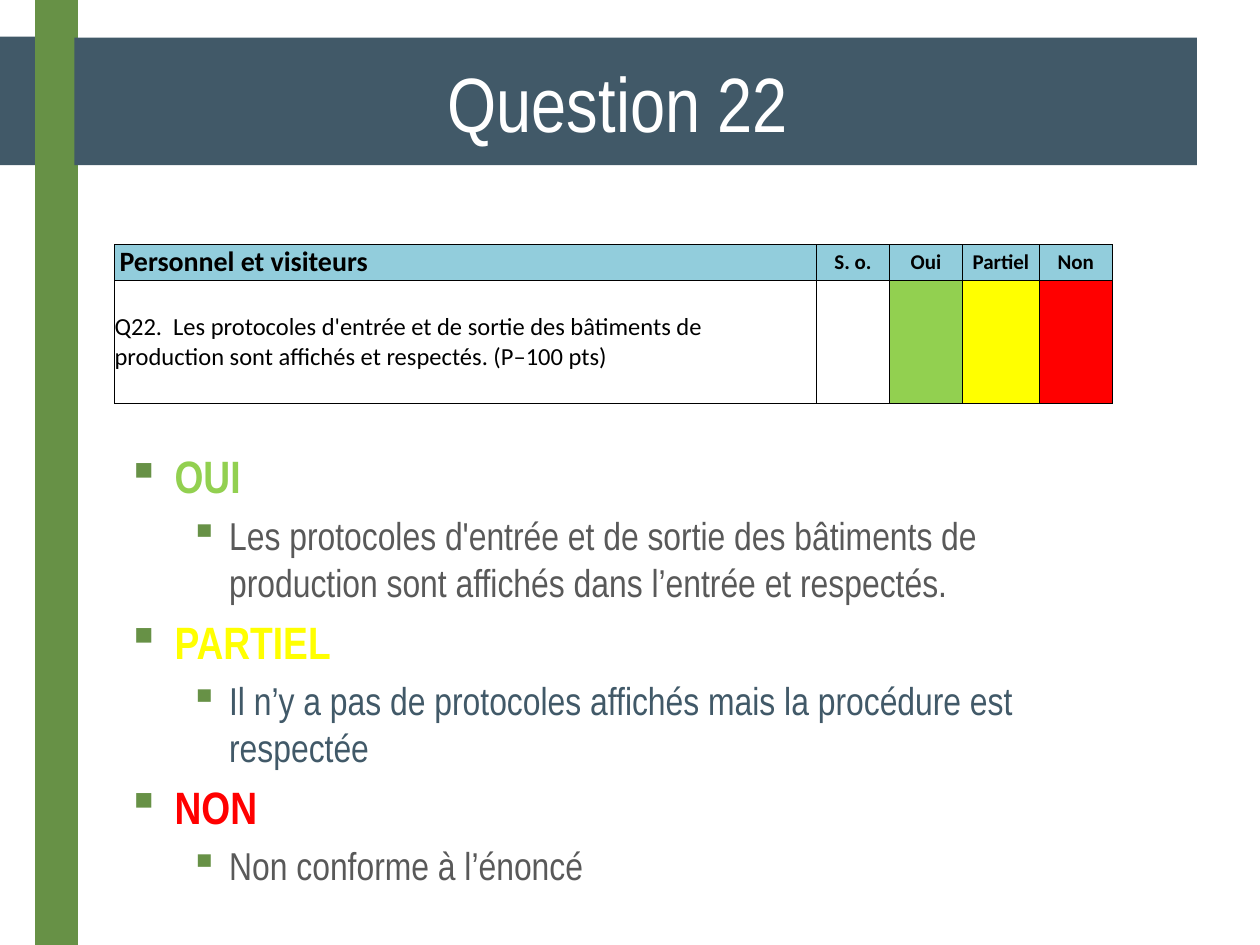
from lxml import etree
from pptx import Presentation
from pptx import util as u
from pptx.dml.color import RGBColor
from pptx.enum import shapes, text
from pptx.oxml import ns

HUE = {
    "slate": "415968", "leaf": "679146", "sky": "92CDDC", "gray": "595959",
    "green": "92D050", "yellow": "FFFF00", "red": "FF0000",
    "black": "000000", "white": "FFFFFF",
}
MID = text.PP_ALIGN.CENTER


def write(para, words, size=12, hue="black", bold=False, font="Calibri", align=None):
    run = para.add_run()
    run.text = words
    run.font.size = u.Pt(size)
    run.font.name = font
    run.font.bold = bold
    run.font.color.rgb = RGBColor.from_string(HUE[hue])
    para.alignment = align


def add(parent, tag, **attrs):
    return etree.SubElement(parent, ns.qn(tag), attrs)


deck = Presentation()
deck.slide_width, deck.slide_height = u.Cm(25.4), u.Cm(19.05)
slide = deck.slides.add_slide(deck.slide_layouts[6])

# Bands; the last one holds the title
for left, top, width, height, hue in [
    (0, 0.74, 1.42, 2.59, "slate"),
    (0.71, 0, 0.86, 19.05, "leaf"),
    (1.5, 0.76, 22.63, 2.57, "slate"),
]:
    band = slide.shapes.add_shape(
        shapes.MSO_SHAPE.RECTANGLE, u.Cm(left), u.Cm(top), u.Cm(width), u.Cm(height))
    band.shadow.inherit = False
    band.fill.solid()
    band.fill.fore_color.rgb = RGBColor.from_string(HUE[hue])
    band.line.fill.background()

title = band.text_frame
title.vertical_anchor = text.MSO_ANCHOR.MIDDLE
title.margin_right = u.Cm(0.96)
write(title.paragraphs[0], "Question 22", size=44, hue="white",
      font="Arial Narrow", align=MID)

# Score table
widths = [14.15, 1.47, 1.47, 1.55, 1.47]
heights = [0.72, 2.49]
heads = ["Personnel et visiteurs", "S. o.", "Oui", "Partiel", "Non"]
query = ("Q22.  Les protocoles d'entrée et de sortie des bâtiments de "
         "production sont affichés et respectés. (P–100 pts)")
fills = [["sky"] * 5, [None, None, "green", "yellow", "red"]]

table = slide.shapes.add_table(
    2, 5, u.Cm(2.31), u.Cm(4.93), u.Cm(sum(widths)), u.Cm(sum(heights))).table
for col, width in zip(table.columns, widths):
    col.width = u.Cm(width)
for row, height in zip(table.rows, heights):
    row.height = u.Cm(height)

for r, hues in enumerate(fills):
    for c, hue in enumerate(hues):
        cell = table.cell(r, c)
        cell.vertical_anchor = text.MSO_ANCHOR.MIDDLE
        cell.margin_left = cell.margin_right = 0
        cell.margin_top = cell.margin_bottom = 0
        for side in ("a:lnL", "a:lnR", "a:lnT", "a:lnB"):
            edge = add(cell._tc.get_or_add_tcPr(), side, w=str(u.Pt(0.5)))
            add(add(edge, "a:solidFill"), "a:srgbClr", val=HUE["black"])
        if hue:
            cell.fill.solid()
            cell.fill.fore_color.rgb = RGBColor.from_string(HUE[hue])
        else:
            cell.fill.background()

for c, head in enumerate(heads):
    write(table.cell(0, c).text_frame.paragraphs[0], head, bold=True,
          size=12 if c else 16, align=MID if c else None)
table.cell(0, 0).margin_left = u.Cm(0.1)
ask = table.cell(1, 0)
ask.margin_right = u.Cm(0.5)
write(ask.text_frame.paragraphs[0], query, size=14)

# Answers: a heading and its meaning for each score
answers = [
    ("OUI", "green", "Les protocoles d'entrée et de sortie des bâtiments de "
     "production sont affichés dans l’entrée et respectés.", "gray"),
    ("PARTIEL", "yellow", "Il n’y a pas de protocoles affichés mais la "
     "procédure est respectée", "slate"),
    ("NON", "red", "Non conforme à l’énoncé", "gray"),
]
frame = slide.shapes.add_textbox(
    u.Cm(2.31), u.Cm(8.92), u.Cm(19.41), u.Cm(9.02)).text_frame
frame.word_wrap = True
para = frame.paragraphs[0]
for score, tint, sense, shade in answers:
    for level, words, hue, size, left, hang in [
        (0, score, tint, 25.9, 0.96, 0.96),
        (1, sense, shade, 22.2, 2.06, 0.79),
    ]:
        if para is None:
            para = frame.add_paragraph()
            para.space_before = u.Pt(5)
        para.level = level
        props = para._p.get_or_add_pPr()
        props.set("marL", str(u.Cm(left)))
        props.set("indent", str(-u.Cm(hang)))
        add(add(props, "a:buClr"), "a:srgbClr", val=HUE["leaf"])
        add(props, "a:buChar", char="▪")
        write(para, words, size=size, hue=hue, bold=level == 0, font="Arial Narrow")
        para = None

deck.save("out.pptx")
